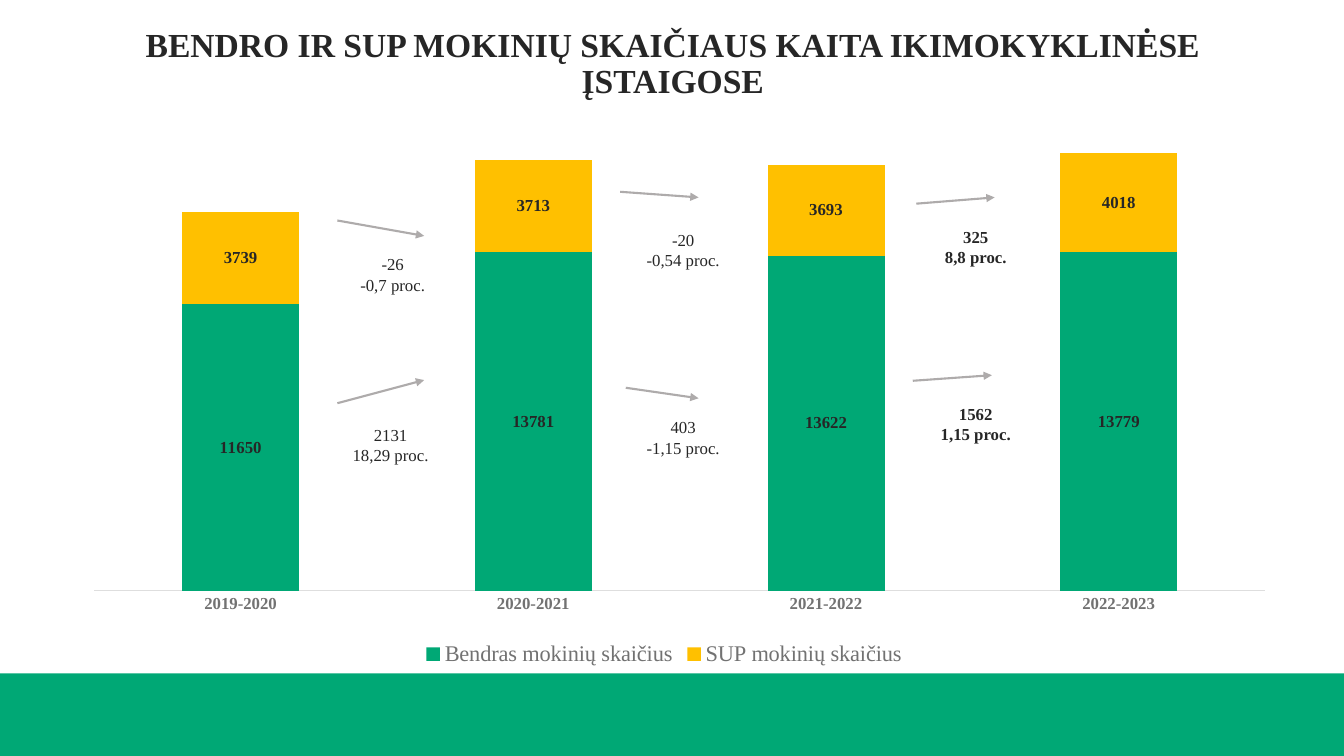
from lxml.etree import SubElement
from pptx import Presentation
from pptx.chart.data import CategoryChartData
from pptx.dml.color import RGBColor
from pptx.enum.chart import XL_CHART_TYPE, XL_LEGEND_POSITION, XL_TICK_MARK
from pptx.enum.shapes import MSO_CONNECTOR, MSO_SHAPE
from pptx.enum.text import MSO_ANCHOR, PP_ALIGN
from pptx.oxml import parse_xml
from pptx.oxml.ns import nsdecls, qn
from pptx.util import Pt

FONT = "Times New Roman"
COLORS = {
    "green": "00A875",
    "yellow": "FFC000",
    "ink": "262626",
    "muted": "727272",
    "axis": "DEDEDE",
    "arrow": "AEABAB",
}
YEARS = ["2019-2020", "2020-2021", "2021-2022", "2022-2023"]
SERIES = [
    ("Bendras mokinių skaičius", [11650, 13781, 13622, 13779], "green"),
    ("SUP mokinių skaičius", [3739, 3713, 3693, 4018], "yellow"),
]
# Arrow start and end, label left and top, label lines, bold
CHANGES = [
    ((241, 157.5), (303, 168.5), (235.5, 178), ("-26", "-0,7 proc."), False),
    ((443, 137), (499, 141), (443, 160.5), ("-20", "-0,54 proc."), False),
    ((654.5, 145.5), (710.5, 141), (652, 158.5), ("325", "8,8 proc."), True),
    ((241, 288), (303, 271.5), (234, 300), ("2131", "18,29 proc."), False),
    ((447, 277), (499, 284.5), (443, 294.5), ("403", "-1,15 proc."), False),
    ((652, 272), (708.5, 268), (652, 284.5), ("1562", "1,15 proc."), True),
]


def rgb(name):
    return RGBColor.from_string(COLORS[name])


def style_font(font, size, color, bold=False):
    font.name = FONT
    font.size = Pt(size)
    font.bold = bold
    font.color.rgb = rgb(color)


def add_text(page, left, top, width, height, lines, size, bold,
             anchor=MSO_ANCHOR.TOP, spacing=1.0):
    box = page.shapes.add_textbox(Pt(left), Pt(top), Pt(width), Pt(height))
    frame = box.text_frame
    frame.word_wrap = True
    frame.vertical_anchor = anchor
    frame.text = "\n".join(lines)
    for para in frame.paragraphs:
        para.alignment = PP_ALIGN.CENTER
        para.line_spacing = spacing
        style_font(para.font, size, "ink", bold)


def add_footer_band(page):
    band = page.shapes.add_shape(MSO_SHAPE.RECTANGLE, 0, Pt(481), Pt(960), Pt(59))
    band.shadow.inherit = False
    band.fill.solid()
    band.fill.fore_color.rgb = rgb("green")
    band.line.fill.background()


def add_arrow(page, start, end):
    arrow = page.shapes.add_connector(
        MSO_CONNECTOR.STRAIGHT, *(Pt(value) for value in start + end))
    arrow.line.color.rgb = rgb("arrow")
    arrow.line.width = Pt(1.5)
    SubElement(arrow.line._get_or_add_ln(), qn("a:tailEnd"), type="triangle")
    SubElement(arrow._element.spPr, qn("a:effectLst"))


def place_plot(chart, x, y, w, h):
    """Fix the inner plot area, in fractions of the chart."""
    area = chart._chartSpace.chart.plotArea
    for old in area.findall(qn("c:layout")):
        area.remove(old)
    sizes = "".join(f'<c:{key} val="{value}"/>'
                    for key, value in zip("xywh", (x, y, w, h)))
    area.insert(0, parse_xml(
        f'<c:layout {nsdecls("c")}><c:manualLayout><c:layoutTarget val="inner"/>'
        f'<c:xMode val="edge"/><c:yMode val="edge"/>{sizes}'
        '</c:manualLayout></c:layout>'))


def add_pupil_chart(page):
    data = CategoryChartData()
    data.categories = YEARS
    for name, values, _ in SERIES:
        data.add_series(name, values)
    chart = page.shapes.add_chart(
        XL_CHART_TYPE.COLUMN_STACKED, Pt(45), Pt(60.5), Pt(859), Pt(419), data).chart
    style_font(chart.font, 12, "ink")
    chart.has_title = False
    place_plot(chart, 0.026, 0.024, 0.974, 0.839)

    plot = chart.plots[0]
    plot.gap_width = 150
    plot.overlap = 100
    plot.vary_by_categories = False
    for series, (_, _, color) in zip(plot.series, SERIES):
        series.format.fill.solid()
        series.format.fill.fore_color.rgb = rgb(color)
        series.data_labels.show_value = True
        style_font(series.data_labels.font, 12, "ink", True)

    years = chart.category_axis
    years.major_tick_mark = XL_TICK_MARK.NONE
    years.format.line.color.rgb = rgb("axis")
    years.format.line.width = Pt(0.75)
    style_font(years.tick_labels.font, 12, "muted", True)

    pupils = chart.value_axis
    pupils.minimum_scale = 0
    pupils.maximum_scale = 20000
    pupils.has_major_gridlines = False
    pupils.visible = False

    chart.has_legend = True
    chart.legend.position = XL_LEGEND_POSITION.BOTTOM
    chart.legend.include_in_layout = False
    style_font(chart.legend.font, 16, "muted")


def main():
    deck = Presentation()
    deck.slide_width = Pt(960)
    deck.slide_height = Pt(540)
    page = deck.slides.add_slide(deck.slide_layouts[6])
    add_footer_band(page)
    add_pupil_chart(page)
    add_text(page, 45, 11.5, 871, 64,
             ["BENDRO IR SUP MOKINIŲ SKAIČIAUS KAITA IKIMOKYKLINĖSE ĮSTAIGOSE"],
             24, True, MSO_ANCHOR.BOTTOM, 0.9)
    for start, end, (left, top), lines, bold in CHANGES:
        add_arrow(page, start, end)
        add_text(page, left, top, 90, 36, lines, 12, bold)
    deck.save("out.pptx")


if __name__ == "__main__":
    main()
